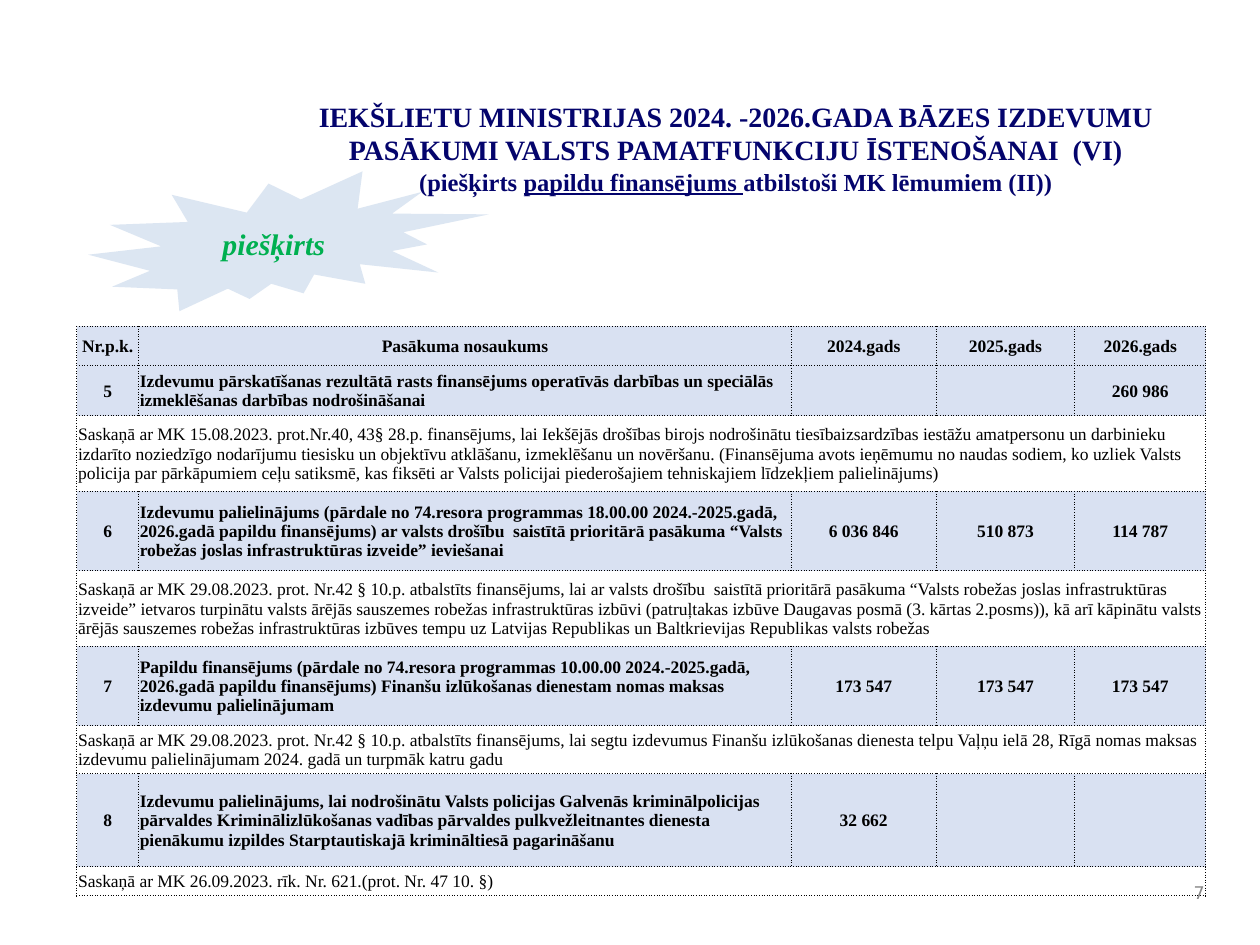
from pptx import Presentation
from pptx.dml.color import RGBColor
from pptx.enum.shapes import MSO_SHAPE
from pptx.enum.text import MSO_ANCHOR, PP_ALIGN
from pptx.oxml.ns import qn
from pptx.util import Inches, Pt
from lxml import etree

LEFT, CENTER, RIGHT = PP_ALIGN.LEFT, PP_ALIGN.CENTER, PP_ALIGN.RIGHT
TOP, MIDDLE = MSO_ANCHOR.TOP, MSO_ANCHOR.MIDDLE
SEAL = MSO_SHAPE.EXPLOSION2

NAVY = RGBColor(0x04, 0x04, 0x6C)
BLACK = RGBColor(0x00, 0x00, 0x00)
GREEN = RGBColor(0x00, 0xB0, 0x50)
GRAY = RGBColor(0x89, 0x89, 0x89)
BAND = RGBColor(0xD9, 0xE1, 0xF2)
PALE = RGBColor(0xDC, 0xE6, 0xF2)
SERIF, SANS = "Times New Roman", "DejaVu Sans"

COLS = [0.49, 5.18, 1.15, 1.1, 1.04]
HEIGHTS = [0.31, 0.4, 0.6, 0.63, 0.6, 0.63, 0.38, 0.74, 0.23]
ROWS = [
    ["Nr.p.k.", "Pasākuma nosaukums", "2024.gads", "2025.gads", "2026.gads"],
    ["5", "Izdevumu pārskatīšanas rezultātā rasts finansējums operatīvās darbības un "
     "speciālās izmeklēšanas darbības nodrošināšanai", "", "", "260 986"],
    ["Saskaņā ar MK 15.08.2023. prot.Nr.40, 43§ 28.p. finansējums, lai Iekšējās drošības "
     "birojs nodrošinātu tiesībaizsardzības iestāžu amatpersonu un darbinieku izdarīto "
     "noziedzīgo nodarījumu tiesisku un objektīvu atklāšanu, izmeklēšanu un novēršanu. "
     "(Finansējuma avots ieņēmumu no naudas sodiem, ko uzliek Valsts policija par "
     "pārkāpumiem ceļu satiksmē, kas fiksēti ar Valsts policijai piederošajiem "
     "tehniskajiem līdzekļiem palielinājums)"],
    ["6", "Izdevumu palielinājums (pārdale no 74.resora programmas 18.00.00 "
     "2024.-2025.gadā, 2026.gadā papildu finansējums) ar valsts drošību  saistītā "
     "prioritārā pasākuma “Valsts robežas joslas infrastruktūras izveide” ieviešanai",
     "6 036 846", "510 873", "114 787"],
    ["Saskaņā ar MK 29.08.2023. prot. Nr.42 § 10.p. atbalstīts finansējums, lai ar valsts "
     "drošību  saistītā prioritārā pasākuma “Valsts robežas joslas infrastruktūras izveide” "
     "ietvaros turpinātu valsts ārējās sauszemes robežas infrastruktūras izbūvi "
     "(patruļtakas izbūve Daugavas posmā (3. kārtas 2.posms)), kā arī kāpinātu valsts "
     "ārējās sauszemes robežas infrastruktūras izbūves tempu uz Latvijas Republikas un "
     "Baltkrievijas Republikas valsts robežas"],
    ["7", "Papildu finansējums (pārdale no 74.resora programmas 10.00.00 "
     "2024.-2025.gadā, 2026.gadā papildu finansējums) Finanšu izlūkošanas dienestam "
     "nomas maksas izdevumu palielinājumam", "173 547", "173 547", "173 547"],
    ["Saskaņā ar MK 29.08.2023. prot. Nr.42 § 10.p. atbalstīts finansējums, lai segtu "
     "izdevumus Finanšu izlūkošanas dienesta telpu Vaļņu ielā 28, Rīgā nomas maksas "
     "izdevumu palielinājumam 2024. gadā un turpmāk katru gadu"],
    ["8", "Izdevumu palielinājums, lai nodrošinātu Valsts policijas Galvenās "
     "kriminālpolicijas pārvaldes Kriminālizlūkošanas vadības pārvaldes "
     "pulkvežleitnantes dienesta pienākumu izpildes Starptautiskajā krimināltiesā "
     "pagarināšanu", "32 662", "", ""],
    ["Saskaņā ar MK 26.09.2023. rīk. Nr. 621.(prot. Nr. 47 10. §)"],
]


def add_text(p, text, size=10, font=SERIF, color=BLACK, bold=False, italic=False,
             underline=False, align=LEFT):
    p.alignment = align
    target = p
    if text:
        target = p.add_run()
        target.text = text
    f = target.font
    f.size, f.name, f.bold, f.italic, f.underline = Pt(size), font, bold, italic, underline
    f.color.rgb = color


def set_borders(cell, width=0.5):
    tc_pr = cell._tc.get_or_add_tcPr()
    for side in ("lnL", "lnR", "lnT", "lnB"):
        ln = etree.SubElement(tc_pr, qn(f"a:{side}"), w=str(Pt(width)))
        fill = etree.SubElement(ln, qn("a:solidFill"))
        etree.SubElement(fill, qn("a:srgbClr"), val=str(BLACK))
        etree.SubElement(ln, qn("a:prstDash"), val="sysDot")


class SlideBuilder:
    def __init__(self, s, font=SERIF):
        self.s = s
        self.font = font

    def text(self, x, y, w, h, paragraphs, anchor=TOP, **style):
        sp = self.s.shapes.add_textbox(Inches(x), Inches(y), Inches(w), Inches(h))
        self.fill_frame(sp.text_frame, paragraphs, anchor, **style)

    def fill_frame(self, tf, paragraphs, anchor, **style):
        tf.word_wrap = True
        tf.vertical_anchor = anchor
        for i, runs in enumerate(paragraphs):
            p = tf.add_paragraph() if i else tf.paragraphs[0]
            for text, extra in runs:
                add_text(p, text, **{"font": self.font, **style, **extra})

    def shape(self, kind, x, y, w, h, fill, paragraphs, **style):
        sp = self.s.shapes.add_shape(kind, Inches(x), Inches(y), Inches(w), Inches(h))
        sp.shadow.inherit = False
        sp.fill.solid()
        sp.fill.fore_color.rgb = fill
        sp.line.fill.background()
        self.fill_frame(sp.text_frame, paragraphs, MIDDLE, **style)

    def table(self, x, y, cols, heights, rows):
        table = self.s.shapes.add_table(
            len(rows), len(cols), Inches(x), Inches(y),
            Inches(sum(cols)), Inches(sum(heights))).table
        for column, width in zip(table.columns, cols):
            column.width = Inches(width)
        for i, (values, height) in enumerate(zip(rows, heights)):
            table.rows[i].height = Inches(height)
            note = len(values) == 1
            if note:
                table.cell(i, 0).merge(table.cell(i, len(cols) - 1))
            for j in range(len(cols)):
                cell = table.cell(i, j)
                set_borders(cell)
                if note:
                    cell.fill.background()
                else:
                    cell.fill.solid()
                    cell.fill.fore_color.rgb = BAND
                cell.vertical_anchor = MIDDLE
                cell.margin_left = cell.margin_right = cell.margin_top = Inches(0.01)
                cell.margin_bottom = 0
                left = note or (j == 1 and i > 0)
                add_text(cell.text_frame.paragraphs[0], values[j] if j < len(values) else "",
                         font=self.font, bold=not note, align=LEFT if left else CENTER)


def main():
    prs = Presentation()
    prs.slide_width, prs.slide_height = Inches(10), Inches(7.5)
    b = SlideBuilder(prs.slides.add_slide(prs.slide_layouts[6]))
    sub = {"size": 14}
    b.text(1.87, 0.74, 7.94, 0.93, [
        [("IEKŠLIETU MINISTRIJAS 2024. -2026.GADA BĀZES IZDEVUMU PASĀKUMI VALSTS "
          "PAMATFUNKCIJU ĪSTENOŠANAI  (VI)", {})],
        [("(piešķirts ", sub),
         ("papildu finansējums ", {**sub, "underline": True}),
         ("atbilstoši MK lēmumiem (II))", sub)],
    ], size=16, color=NAVY, bold=True, align=CENTER)
    b.text(9.33, 6.92, 0.33, 0.33, [[("7", {})]], anchor=MIDDLE,
           font=SANS, color=GRAY, align=RIGHT)
    b.table(0.61, 2.59, COLS, HEIGHTS, ROWS)
    b.shape(SEAL, 0.7, 1.36, 3.18, 1.11, PALE, [[("piešķirts", {})]],
            size=17, color=GREEN, bold=True, italic=True, align=CENTER)
    prs.save("out.pptx")


if __name__ == "__main__":
    main()
